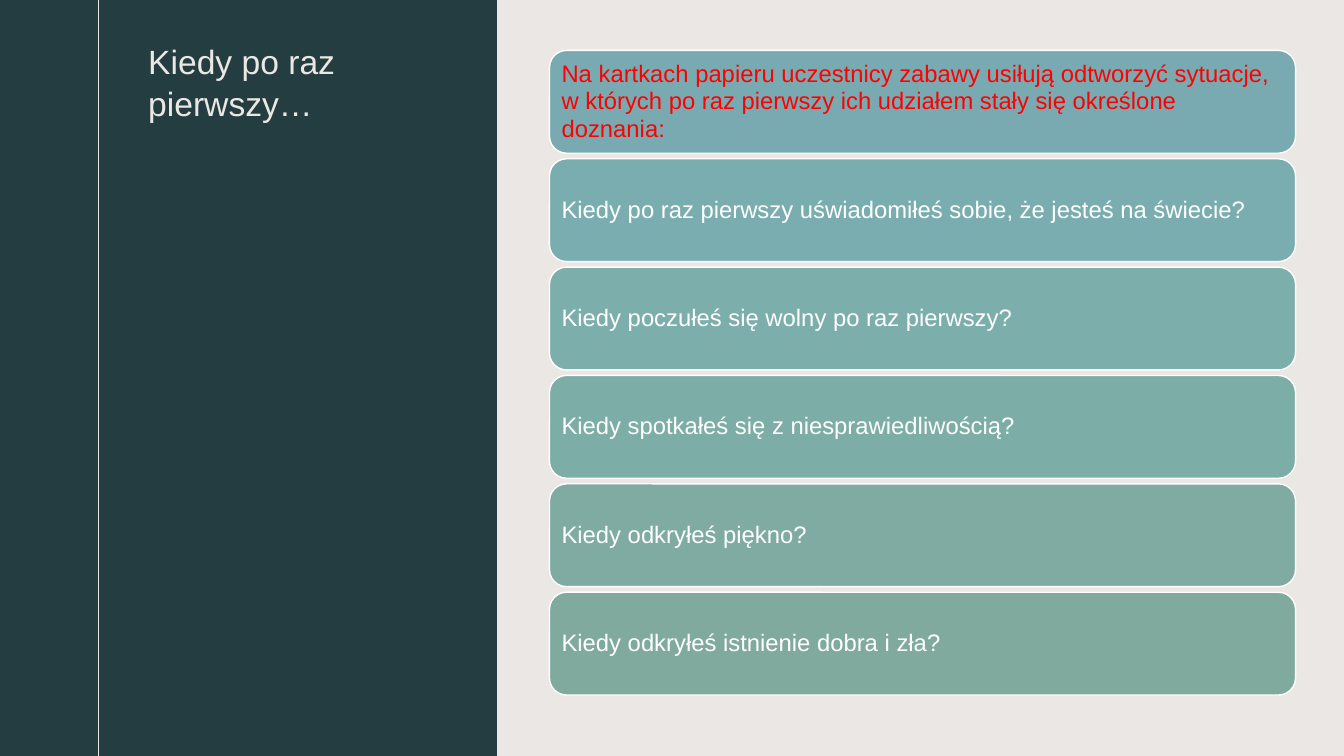
from lxml.etree import SubElement
from pptx import Presentation
from pptx.dml.color import RGBColor
from pptx.enum.shapes import MSO_CONNECTOR, MSO_SHAPE
from pptx.enum.text import MSO_ANCHOR, PP_ALIGN
from pptx.oxml.ns import qn
from pptx.util import Inches, Pt

HUES = {"sand": "EAE7E4", "dark": "243D41", "white": "FFFFFF", "red": "FF0000"}
CARDS = [
    ("79AAB1", "Na kartkach papieru uczestnicy zabawy usiłują odtworzyć sytuacje, "
               "w których po raz pierwszy ich udziałem stały się określone doznania:"),
    ("7AADB0", "Kiedy po raz pierwszy uświadomiłeś sobie, że jesteś na świecie?"),
    ("7CAEAC", "Kiedy poczułeś się wolny po raz pierwszy?"),
    ("7DADA7", "Kiedy spotkałeś się z niesprawiedliwością?"),
    ("7FABA2", "Kiedy odkryłeś piękno?"),
    ("80AA9E", "Kiedy odkryłeś istnienie dobra i zła?"),
]
TOP, STEP = 0.5, 1.075


def color(name):
    return RGBColor.from_string(HUES.get(name, name))


def write(frame, text, size=17, hue="white", pad=0.0, gap=1.0, anchor=MSO_ANCHOR.TOP):
    frame.word_wrap = True
    frame.vertical_anchor = anchor
    frame.margin_left = frame.margin_right = Inches(pad)
    frame.margin_top = frame.margin_bottom = Inches(pad)
    para = frame.paragraphs[0]
    para.alignment = PP_ALIGN.LEFT
    para.line_spacing = gap
    run = para.add_run()
    run.text = text
    run.font.name = "Arial"
    run.font.size = Pt(size)
    run.font.color.rgb = color(hue)


class Deck:
    """Holds the presentation and its current slide."""

    def __init__(self):
        self.prs = Presentation()
        self.prs.slide_width = Inches(13.33)
        self.prs.slide_height = Inches(7.5)
        self.slide = self.prs.slides.add_slide(self.prs.slide_layouts[6])
        fill = self.slide.background.fill
        fill.solid()
        fill.fore_color.rgb = color("sand")

    def shape(self, kind, box, fill, edge=None):
        item = self.slide.shapes.add_shape(kind, *map(Inches, box))
        item.shadow.inherit = False
        item.fill.solid()
        item.fill.fore_color.rgb = color(fill)
        if edge:
            item.line.color.rgb = color(edge)
            item.line.width = Pt(1)
        else:
            item.line.fill.background()
        return item

    def text(self, box, text, **style):
        item = self.slide.shapes.add_textbox(*map(Inches, box))
        write(item.text_frame, text, **style)

    def rule(self, left, hue):
        """Draw a full-height vertical line."""
        line = self.slide.shapes.add_connector(
            MSO_CONNECTOR.STRAIGHT, Inches(left), 0, Inches(left), Inches(7.5))
        line.line.color.rgb = color(hue)
        line.line.width = Pt(0.75)
        SubElement(line.element.spPr, qn("a:effectLst"))

    def card(self, top, fill, text, hue):
        item = self.shape(MSO_SHAPE.ROUNDED_RECTANGLE, (5.45, top, 7.4, 1.02), fill, "white")
        write(item.text_frame, text, hue=hue, pad=0.07, gap=0.95, anchor=MSO_ANCHOR.MIDDLE)


def main():
    deck = Deck()
    deck.shape(MSO_SHAPE.RECTANGLE, (0, 0, 4.93, 7.5), "dark")
    deck.text((1.47, 0.39, 2.98, 6.66), "Kiedy po raz pierwszy…", size=24, hue="sand", gap=1.04)
    deck.rule(0.98, "sand")
    for row, (fill, text) in enumerate(CARDS):
        deck.card(TOP + row * STEP, fill, text, "white" if row else "red")
    deck.prs.save("out.pptx")


if __name__ == "__main__":
    main()
